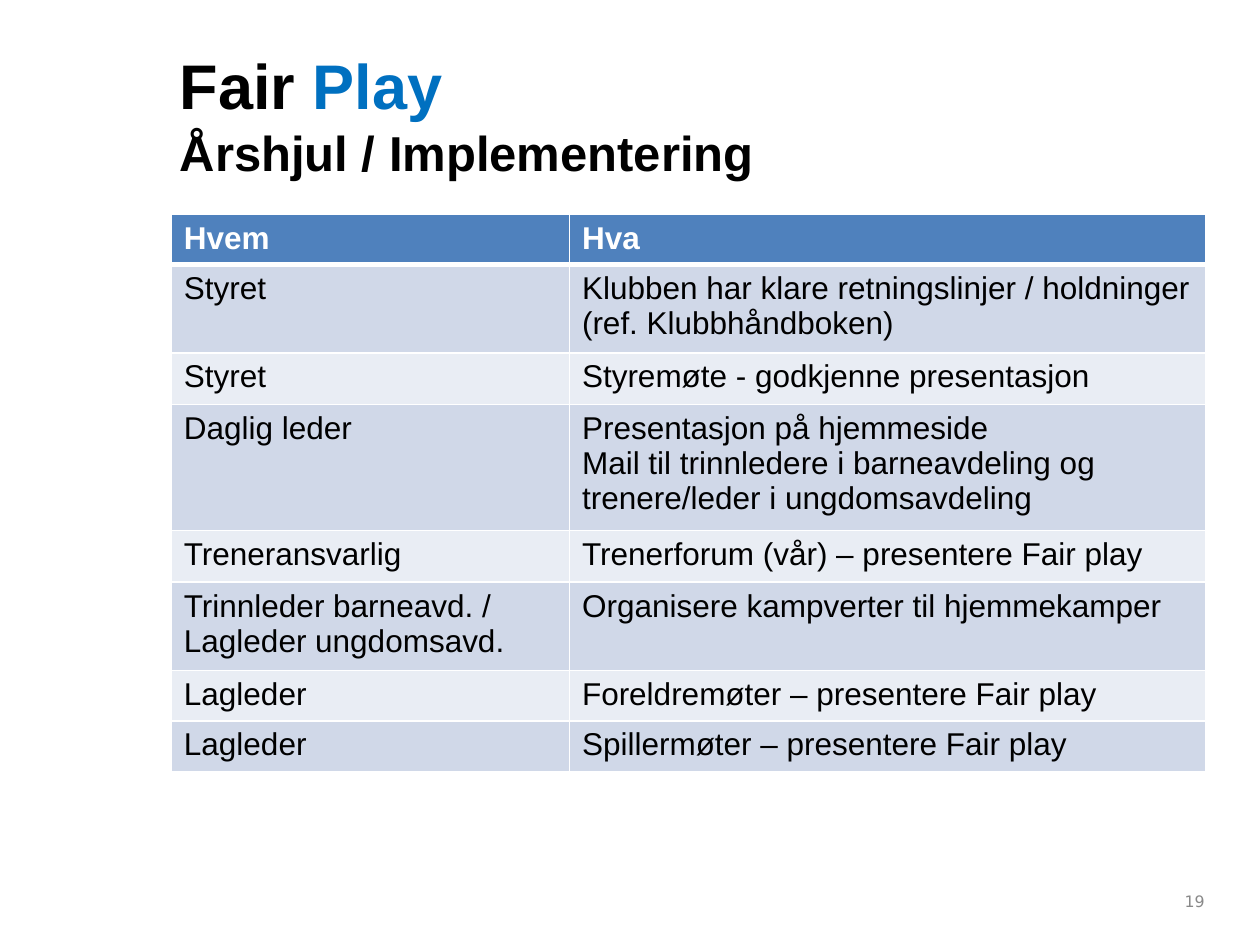
from lxml.etree import SubElement
from pptx import Presentation
from pptx.dml.color import RGBColor
from pptx.enum.text import MSO_ANCHOR as Anchor, PP_ALIGN as Align
from pptx.oxml.ns import qn
from pptx.util import Inches, Pt

COLORS = {
    "black": "000000",
    "white": "FFFFFF",
    "blue": "0070C0",
    "grey": "898989",
    "header": "4F81BD",
    "odd": "D0D8E8",
    "even": "E9EDF4",
}

TITLE_LINES = [
    [("Fair ", 36, "black"), ("Play", 36, "blue")],
    [("Årshjul / Implementering", 28, "black")],
]

COLUMN_WIDTHS = [3.16, 5.05]

ROWS = [
    (0.4, "Hvem", "Hva"),
    (0.66, "Styret", "Klubben har klare retningslinjer / holdninger (ref. Klubbhåndboken)"),
    (0.41, "Styret", "Styremøte - godkjenne presentasjon"),
    (0.94, "Daglig leder",
     "Presentasjon på hjemmeside\n"
     "Mail til trinnledere i barneavdeling og trenere/leder i ungdomsavdeling"),
    (0.41, "Treneransvarlig", "Trenerforum (vår) – presentere Fair play"),
    (0.66, "Trinnleder barneavd. /\nLagleder ungdomsavd.",
     "Organisere kampverter til hjemmekamper"),
    (0.38, "Lagleder", "Foreldremøter – presentere Fair play"),
    (0.38, "Lagleder", "Spillermøter – presentere Fair play"),
]


class Deck:
    def __init__(self, prs):
        self.s = prs.slides.add_slide(prs.slide_layouts[6])
        self.font = "Arial"

    def style(self, r, size, color, bold=False, font=None):
        r.font.name = font or self.font
        r.font.size = Pt(size)
        r.font.bold = bold
        r.font.color.rgb = RGBColor.from_string(COLORS[color])

    def box(self, x, y, w, h):
        tf = self.s.shapes.add_textbox(Inches(x), Inches(y), Inches(w), Inches(h)).text_frame
        tf.word_wrap = True
        tf.vertical_anchor = Anchor.MIDDLE
        return tf

    def title(self, x, y, w, h, lines):
        p = self.box(x, y, w, h).paragraphs[0]
        for i, line in enumerate(lines):
            if i:
                p.add_line_break()
            for text, size, color in line:
                r = p.add_run()
                r.text = text
                self.style(r, size, color, bold=True)

    def page_number(self, x, y, w, h, text):
        tf = self.box(x, y, w, h)
        tf.text = text
        p = tf.paragraphs[0]
        p.alignment = Align.RIGHT
        self.style(p.runs[0], 9, "grey", font="DejaVu Sans")

    def borders(self, cell, bottom):
        tcPr = cell._tc.get_or_add_tcPr()
        for side, width in (("L", 1), ("R", 1), ("T", 1), ("B", bottom)):
            ln = SubElement(tcPr, qn(f"a:ln{side}"), w=str(Pt(width)))
            fill = SubElement(ln, qn("a:solidFill"))
            SubElement(fill, qn("a:srgbClr"), val=COLORS["white"])

    def cell(self, cell, text, header, fill):
        self.borders(cell, 3 if header else 1)
        cell.fill.solid()
        cell.fill.fore_color.rgb = RGBColor.from_string(COLORS[fill])
        cell.text_frame.text = text
        for p in cell.text_frame.paragraphs:
            self.style(p.runs[0], 18, "white" if header else "black", bold=header)

    def table(self, x, y, widths, rows):
        height = sum(row[0] for row in rows)
        table = self.s.shapes.add_table(
            len(rows), len(widths), Inches(x), Inches(y),
            Inches(sum(widths)), Inches(height)).table
        for column, width in zip(table.columns, widths):
            column.width = Inches(width)
        for i, (row_height, *texts) in enumerate(rows):
            table.rows[i].height = Inches(row_height)
            fill = "header" if i == 0 else "odd" if i % 2 else "even"
            for j, text in enumerate(texts):
                self.cell(table.cell(i, j), text, i == 0, fill)


def main():
    prs = Presentation()
    prs.slide_width = Inches(10)
    prs.slide_height = Inches(7.5)
    deck = Deck(prs)
    deck.page_number(7.33, 6.95, 2.33, 0.4, "19")
    deck.table(1.36, 1.7, COLUMN_WIDTHS, ROWS)
    deck.title(1.33, 0.28, 7.13, 1.25, TITLE_LINES)
    prs.save("out.pptx")


if __name__ == "__main__":
    main()
